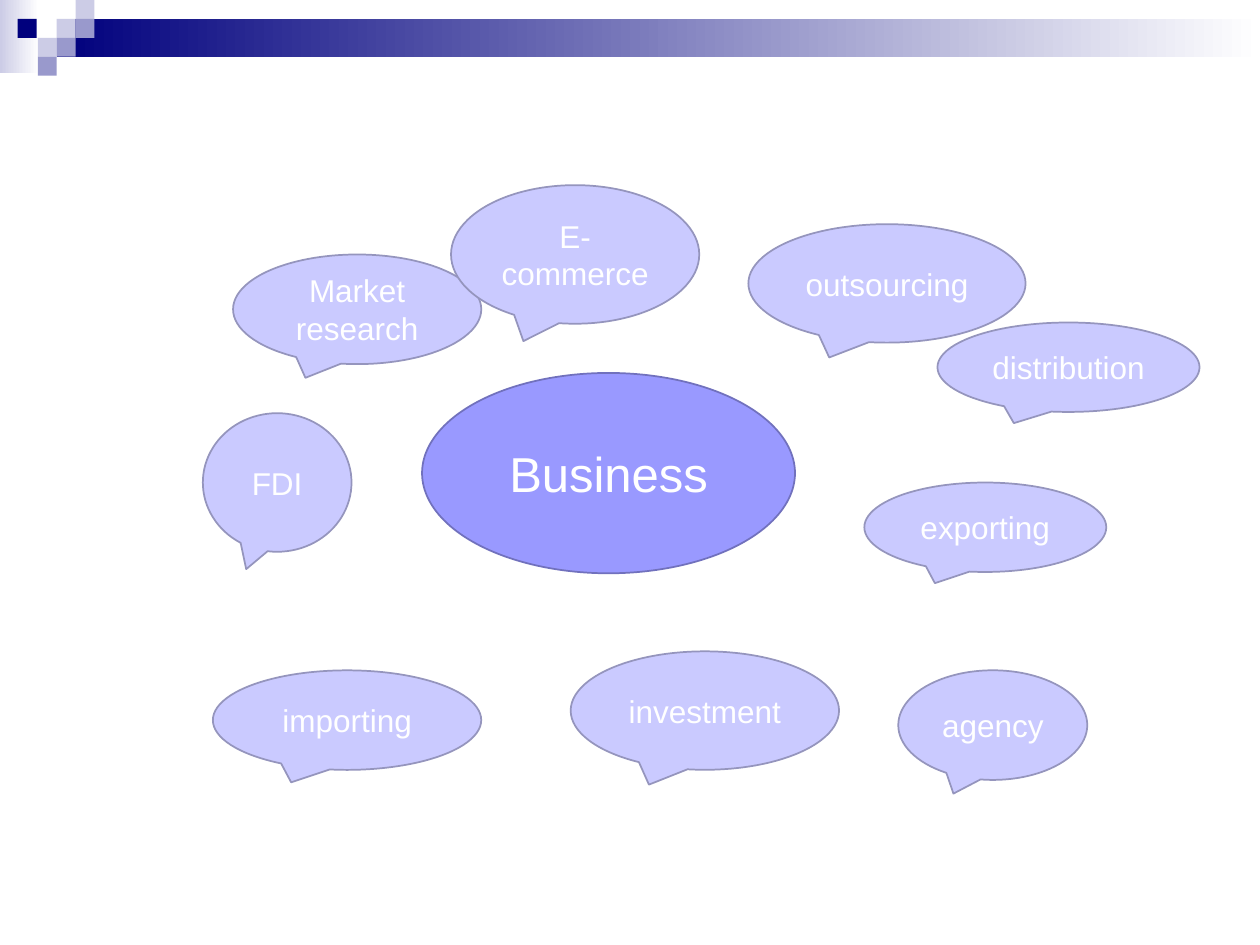
from dataclasses import dataclass

from pptx import Presentation
from pptx.dml.color import RGBColor
from pptx.enum.shapes import MSO_SHAPE
from pptx.enum.text import MSO_ANCHOR, PP_ALIGN
from pptx.util import Inches, Pt

RECTANGLE = MSO_SHAPE.RECTANGLE
ELLIPSE = MSO_SHAPE.OVAL
CALLOUT = MSO_SHAPE.OVAL_CALLOUT
MIDDLE = MSO_ANCHOR.MIDDLE
CENTER = PP_ALIGN.CENTER

NAVY, LAVENDER, MAUVE, WHITE = "00007D", "CCCCE6", "9999CC", "FFFFFF"
TILE = 0.15


@dataclass(frozen=True)
class Box:
    left: float
    top: float
    width: float
    height: float


@dataclass(frozen=True)
class Band:
    box: Box
    start: str


@dataclass(frozen=True)
class Tile:
    left: float
    top: float
    color: str


@dataclass(frozen=True)
class Style:
    kind: int
    fill: str
    line: str
    size: int


@dataclass(frozen=True)
class Bubble:
    text: str
    box: Box


BANDS = [
    Band(Box(0, 0, 0.31, 0.58), LAVENDER),
    Band(Box(0.45, 0.15, 9.55, 0.3), NAVY),
]
TILES = [
    Tile(0.45, 0.15, LAVENDER),
    Tile(0.6, 0, LAVENDER),
    Tile(0.6, 0.15, MAUVE),
    Tile(0.3, 0.3, LAVENDER),
    Tile(0.14, 0.15, NAVY),
    Tile(0.45, 0.3, MAUVE),
    Tile(0.3, 0.45, MAUVE),
]
TOPIC_STYLE = Style(ELLIPSE, "9999FF", "7171BD", 28)
IDEA_STYLE = Style(CALLOUT, "CACAFF", "9595BD", 18)
TOPIC = Bubble("Business", Box(3.35, 2.96, 2.96, 1.59))
IDEAS = [
    Bubble("Market research", Box(1.85, 2.02, 1.97, 0.87)),
    Bubble("importing", Box(1.69, 5.32, 2.13, 0.79)),
    Bubble("FDI", Box(1.61, 3.28, 1.18, 1.1)),
    Bubble("exporting", Box(6.86, 3.83, 1.92, 0.71)),
    Bubble("investment", Box(4.53, 5.17, 2.13, 0.94)),
    Bubble("outsourcing", Box(5.94, 1.78, 2.2, 0.94)),
    Bubble("agency", Box(7.13, 5.32, 1.5, 0.87)),
    Bubble("distribution", Box(7.44, 2.56, 2.08, 0.71)),
    Bubble("E-commerce", Box(3.58, 1.47, 1.97, 1.1)),
]


def rgb(color: str) -> RGBColor:
    return RGBColor.from_string(color)


def add_shape(slide, kind: int, box: Box):
    shape = slide.shapes.add_shape(
        kind, Inches(box.left), Inches(box.top), Inches(box.width), Inches(box.height)
    )
    shape.shadow.inherit = False
    return shape


def fill_solid(shape, color: str) -> None:
    shape.fill.solid()
    shape.fill.fore_color.rgb = rgb(color)


def draw_band(slide, band: Band) -> None:
    shape = add_shape(slide, RECTANGLE, band.box)
    shape.line.fill.background()
    shape.fill.gradient()
    shape.fill.gradient_angle = 0
    for stop, position, color in zip(
        shape.fill.gradient_stops, (0, 1), (band.start, WHITE)
    ):
        stop.position = position
        stop.color.rgb = rgb(color)


def draw_tile(slide, tile: Tile) -> None:
    shape = add_shape(slide, RECTANGLE, Box(tile.left, tile.top, TILE, TILE))
    shape.line.fill.background()
    fill_solid(shape, tile.color)


def draw_bubble(slide, bubble: Bubble, style: Style) -> None:
    shape = add_shape(slide, style.kind, bubble.box)
    fill_solid(shape, style.fill)
    shape.line.color.rgb = rgb(style.line)
    shape.line.width = Pt(1)
    frame = shape.text_frame
    frame.word_wrap = True
    frame.vertical_anchor = MIDDLE
    paragraph = frame.paragraphs[0]
    paragraph.alignment = CENTER
    run = paragraph.add_run()
    run.text = bubble.text
    font_format = {"name": "Arial", "size": Pt(style.size)}
    for attribute, value in font_format.items():
        setattr(run.font, attribute, value)
    run.font.color.rgb = rgb(WHITE)


def main() -> None:
    presentation = Presentation()
    presentation.slide_width = Inches(10)
    presentation.slide_height = Inches(7.5)
    slide = presentation.slides.add_slide(presentation.slide_layouts[6])
    for band in BANDS:
        draw_band(slide, band)
    for tile in TILES:
        draw_tile(slide, tile)
    draw_bubble(slide, TOPIC, TOPIC_STYLE)
    for idea in IDEAS:
        draw_bubble(slide, idea, IDEA_STYLE)
    presentation.save("out.pptx")


if __name__ == "__main__":
    main()
